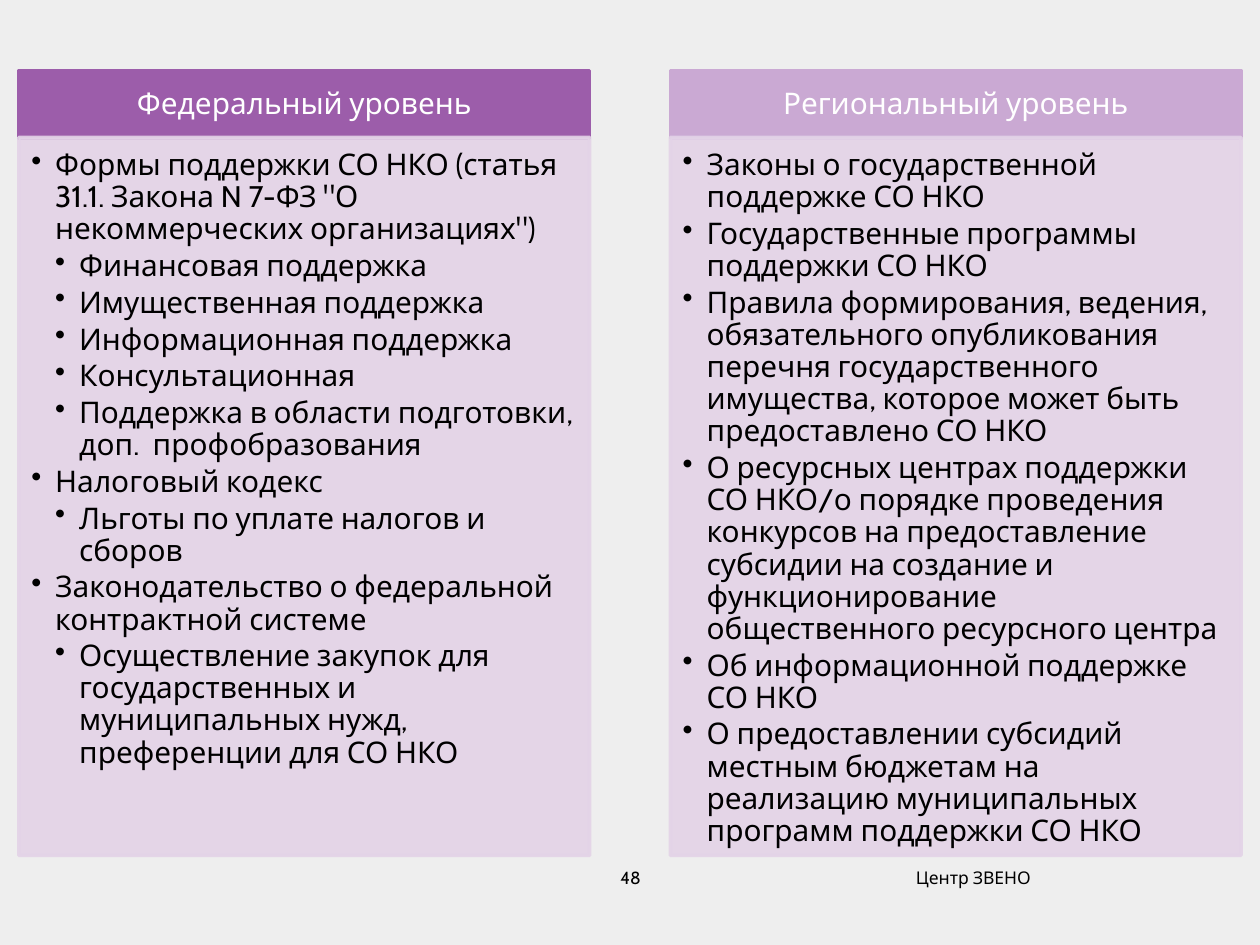
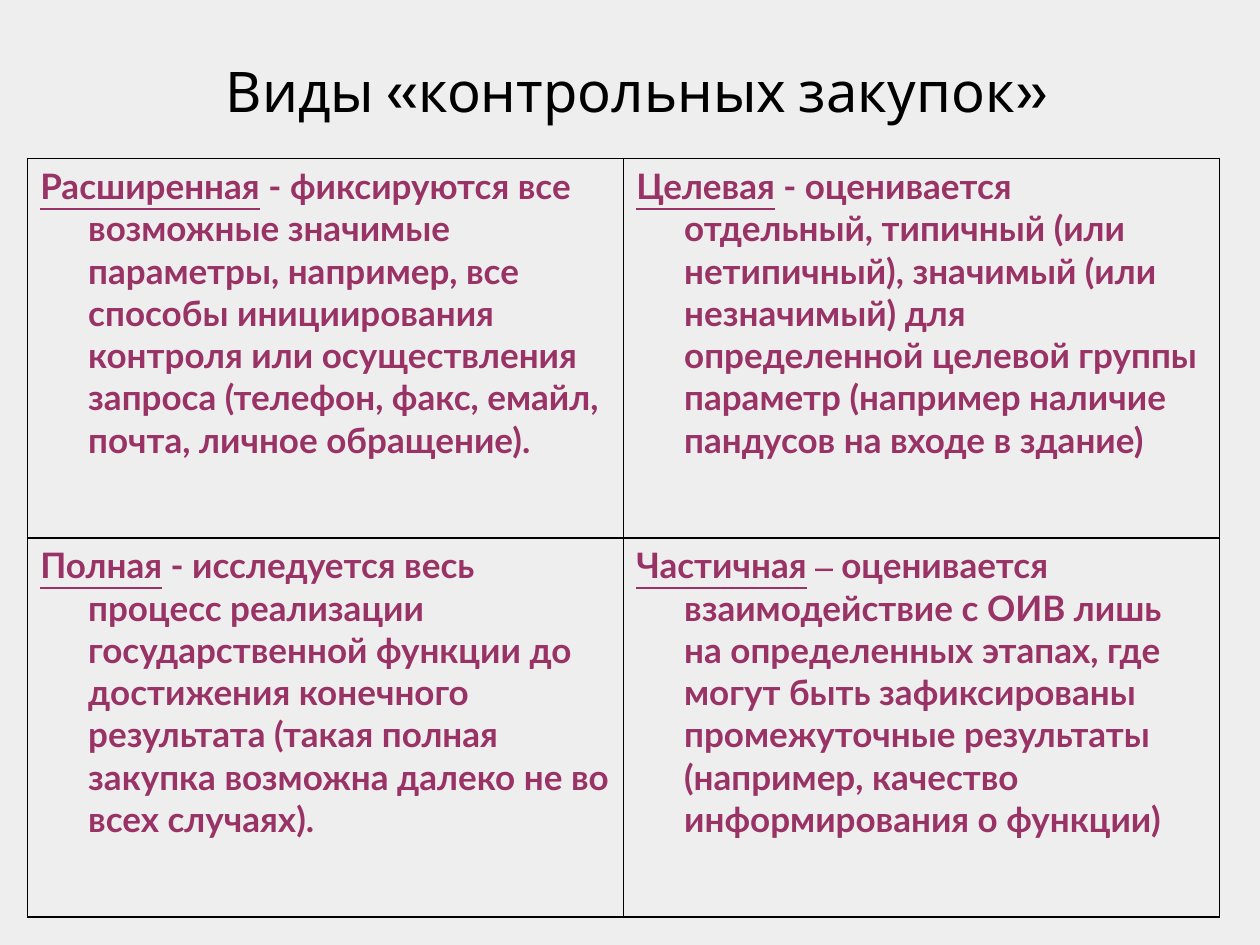
from typing import NamedTuple

from lxml.etree import SubElement
from pptx import Presentation
from pptx.dml.color import RGBColor
from pptx.enum.shapes import MSO_SHAPE as Shape
from pptx.enum.text import MSO_ANCHOR as Anchor, PP_ALIGN as Align
from pptx.oxml import parse_xml
from pptx.oxml.ns import nsdecls, qn
from pptx.util import Inches, Pt

BACKGROUND = "EEEEEE"
BLACK = "000000"
WHITE = "FFFFFF"
PANEL = "E3D3E7"
PLUM = "993366"
BODY_FONT = "Cabin"
TABLE_FONT = "Lato"
DASH_FONT = "Times New Roman"
TITLE_ONLY, BLANK = 5, 6

COLUMN_WIDTH, HEADER_TOP, HEADER_HEIGHT = 4.53, 0.56, 0.54
PANEL_TOP, PANEL_HEIGHT = 1.09, 5.7
BULLET_STEP = 0.19
FOOTER_TOP, FOOTER_HEIGHT = 6.83, 0.52
CELL_WIDTH, CELL_HEIGHT, CELL_INDENT = 4.73, 3.01, 0.38


class Point(NamedTuple):
    text: str
    level: int = 1


class LawLevel(NamedTuple):
    heading: str
    color: str
    left: float
    points: list[Point]


class Footer(NamedTuple):
    text: str
    left: float
    width: float
    align: Align


class Purchase(NamedTuple):
    term: str
    dash: str
    meaning: str


LAW_LEVELS = [
    LawLevel("Федеральный уровень", "9C5DAA", 0.15, [
        Point('Формы поддержки СО НКО (статья 31.1. Закона N 7-ФЗ "О некоммерческих организациях")'),
        Point("Финансовая поддержка", 2),
        Point("Имущественная поддержка", 2),
        Point("Информационная поддержка", 2),
        Point("Консультационная", 2),
        Point("Поддержка в области подготовки, доп.  профобразования", 2),
        Point("Налоговый кодекс"),
        Point("Льготы по уплате налогов и сборов", 2),
        Point("Законодательство о федеральной контрактной системе"),
        Point("Осуществление закупок для государственных и муниципальных нужд, "
              "преференции для СО НКО", 2),
    ]),
    LawLevel("Региональный уровень", "CAA9D3", 5.32, [
        Point("Законы о государственной поддержке СО НКО"),
        Point("Государственные программы поддержки СО НКО"),
        Point("Правила формирования, ведения, обязательного опубликования перечня "
              "государственного имущества, которое может быть предоставлено СО НКО"),
        Point("О ресурсных центрах поддержки СО НКО/о порядке проведения конкурсов на "
              "предоставление субсидии на создание и функционирование общественного "
              "ресурсного центра"),
        Point("Об информационной поддержке СО НКО"),
        Point("О предоставлении субсидий местным бюджетам на реализацию муниципальных "
              "программ поддержки СО НКО"),
    ]),
]

FOOTERS = [
    Footer("Центр ЗВЕНО", 7.17, 2.33, Align.LEFT),
    Footer("48", 3.42, 3.17, Align.CENTER),
]

PURCHASES = [
    [
        Purchase("Расширенная", "-", "фиксируются все возможные значимые параметры, например, "
                 "все способы инициирования контроля или осуществления запроса (телефон, факс, "
                 "емайл, почта, личное обращение)."),
        Purchase("Целевая", "-", "оценивается отдельный, типичный (или нетипичный), значимый "
                 "(или незначимый) для определенной целевой группы параметр (например наличие "
                 "пандусов на входе в здание)"),
    ],
    [
        Purchase("Полная", "-", "исследуется весь процесс реализации государственной функции до "
                 "достижения конечного результата (такая полная закупка возможна далеко не во "
                 "всех случаях)."),
        Purchase("Частичная", "–", "оценивается взаимодействие с ОИВ лишь на определенных этапах, "
                 "где могут быть зафиксированы промежуточные результаты (например, качество "
                 "информирования о функции)"),
    ],
]


def rgb(color: str) -> RGBColor:
    return RGBColor.from_string(color)


def style(paragraph, size: float, color: str, font: str = BODY_FONT) -> None:
    paragraph.font.size = Pt(size)
    paragraph.font.name = font
    paragraph.font.color.rgb = rgb(color)


def add_block(slide, left: float, top: float, height: float, color: str,
              insets: tuple[float, float, float, float]):
    """Add a column-wide rectangle; insets run left, top, right, bottom."""
    block = slide.shapes.add_shape(Shape.RECTANGLE, Inches(left), Inches(top),
                                   Inches(COLUMN_WIDTH), Inches(height))
    block.shadow.inherit = False
    block.fill.solid()
    block.fill.fore_color.rgb = rgb(color)
    block.line.color.rgb = rgb(color)
    block.line.width = Pt(2)
    frame = block.text_frame
    frame.word_wrap = True
    (frame.margin_left, frame.margin_top,
     frame.margin_right, frame.margin_bottom) = map(Inches, insets)
    return block


def make_translucent(block, percent: int) -> None:
    """Set the opacity of the block's fill and line."""
    for color in block._element.spPr.iter(qn("a:srgbClr")):
        SubElement(color, qn("a:alpha"), val=str(percent * 1000))


def add_bullet(paragraph, level: int) -> None:
    properties = paragraph._p.get_or_add_pPr()
    properties.set("marL", str(Inches(BULLET_STEP * level)))
    properties.set("indent", str(-Inches(BULLET_STEP)))
    SubElement(properties, qn("a:buChar"), char="•")


def add_law_level(slide, law: LawLevel) -> None:
    header = add_block(slide, law.left, HEADER_TOP, HEADER_HEIGHT, law.color,
                       (0.13, 0.08, 0.13, 0.08))
    header.text_frame.vertical_anchor = Anchor.MIDDLE
    heading = header.text_frame.paragraphs[0]
    heading.text = law.heading
    heading.alignment = Align.CENTER
    heading.line_spacing = 0.9
    style(heading, 17, WHITE)

    panel = add_block(slide, law.left, PANEL_TOP, PANEL_HEIGHT, PANEL, (0.1, 0.1, 0.13, 0.15))
    make_translucent(panel, 90)
    frame = panel.text_frame
    frame.vertical_anchor = Anchor.TOP
    for index, point in enumerate(law.points):
        paragraph = frame.add_paragraph() if index else frame.paragraphs[0]
        paragraph.text = point.text
        paragraph.level = point.level
        paragraph.alignment = Align.LEFT
        paragraph.line_spacing = 0.9
        paragraph.space_after = Pt(2.6)
        add_bullet(paragraph, point.level)
        style(paragraph, 17, BLACK)


def add_footer(slide, footer: Footer) -> None:
    box = slide.shapes.add_textbox(Inches(footer.left), Inches(FOOTER_TOP),
                                   Inches(footer.width), Inches(FOOTER_HEIGHT))
    box.text_frame.word_wrap = True
    paragraph = box.text_frame.paragraphs[0]
    paragraph.text = footer.text
    paragraph.alignment = footer.align
    style(paragraph, 10, BLACK)


def add_title(slide, text: str) -> None:
    title = slide.shapes.title
    title.left, title.top, title.width, title.height = map(Inches, (1.69, 0, 8.31, 1.03))
    title.text_frame.vertical_anchor = Anchor.BOTTOM
    paragraph = title.text_frame.paragraphs[0]
    paragraph.text = text
    paragraph.alignment = Align.LEFT
    paragraph.line_spacing = Pt(28)
    style(paragraph, 32, BLACK)


def add_borders(cell) -> None:
    properties = cell._tc.get_or_add_tcPr()
    for index, side in enumerate(("lnL", "lnR", "lnT", "lnB")):
        properties.insert(index, parse_xml(
            f'<a:{side} {nsdecls("a")} w="{Pt(1)}"><a:solidFill>'
            f'<a:srgbClr val="{BLACK}"/></a:solidFill></a:{side}>'))


def fill_cell(cell, purchase: Purchase) -> None:
    add_borders(cell)
    cell.fill.background()
    paragraph = cell.text_frame.paragraphs[0]
    properties = paragraph._p.get_or_add_pPr()
    properties.set("marL", str(Inches(CELL_INDENT)))
    properties.set("indent", str(-Inches(CELL_INDENT)))
    style(paragraph, 20, PLUM, TABLE_FONT)
    paragraph.font.bold = True
    term, _, dash, _ = [paragraph.add_run() for _ in range(4)]
    for run, text in zip(paragraph.runs,
                         (purchase.term, " ", purchase.dash, f" {purchase.meaning}")):
        run.text = text
    term.font.underline = True
    if purchase.dash == "–":
        dash.font.name = DASH_FONT


def add_purchase_table(slide) -> None:
    rows, columns = len(PURCHASES), len(PURCHASES[0])
    table = slide.shapes.add_table(rows, columns, Inches(0.22), Inches(1.26),
                                   Inches(CELL_WIDTH * columns),
                                   Inches(CELL_HEIGHT * rows)).table
    table.first_row = False
    table.horz_banding = False
    for row, purchases in enumerate(PURCHASES):
        for column, purchase in enumerate(purchases):
            fill_cell(table.cell(row, column), purchase)


def main() -> None:
    prs = Presentation()
    prs.slide_width, prs.slide_height = Inches(10), Inches(7.5)
    backdrop = prs.slide_master.background.fill
    backdrop.solid()
    backdrop.fore_color.rgb = rgb(BACKGROUND)

    levels_slide = prs.slides.add_slide(prs.slide_layouts[BLANK])
    for law in LAW_LEVELS:
        add_law_level(levels_slide, law)
    for footer in FOOTERS:
        add_footer(levels_slide, footer)

    purchases_slide = prs.slides.add_slide(prs.slide_layouts[TITLE_ONLY])
    add_title(purchases_slide, "Виды «контрольных закупок»")
    add_purchase_table(purchases_slide)
    prs.save("out.pptx")


if __name__ == "__main__":
    main()
